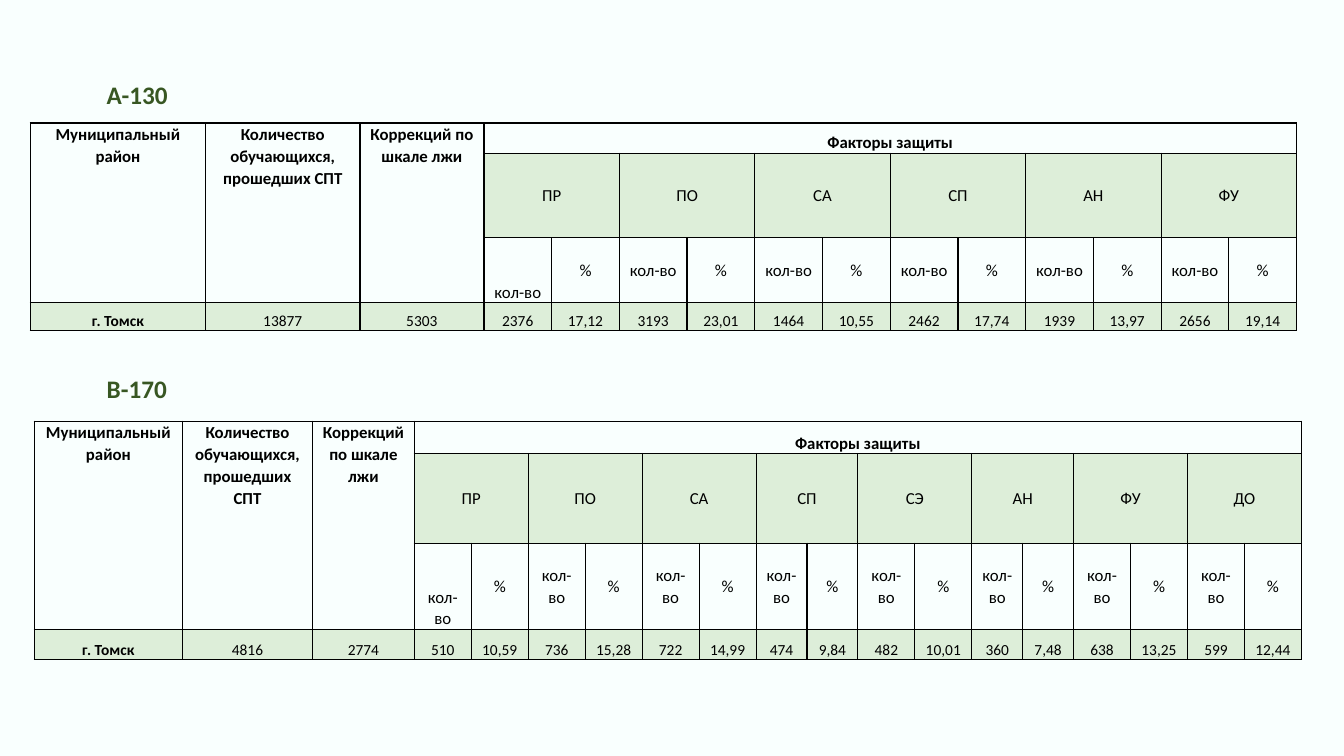
from pptx import Presentation
from pptx.dml.color import RGBColor
from pptx.enum.text import MSO_ANCHOR as Anchor, PP_ALIGN as Align
from pptx.oxml import parse_xml
from pptx.oxml.ns import nsdecls
from pptx.util import Inches, Pt

LINE = ('<a:{} {} w="12700"><a:solidFill><a:srgbClr val="000000"/></a:solidFill>'
        '</a:{}>')
ALPHA = '<a:alpha {} val="20000"/>'
INK = {"name": "Calibri", "color": "000000"}


def rgb(tint):
    return RGBColor.from_string(tint)


def write(frame, text, fmt, **para):
    """Put one run of text in a frame, with font and paragraph formats."""
    line = frame.paragraphs[0]
    line.line_spacing = 1.07
    for key, val in para.items():
        setattr(line, key, val)
    run = line.add_run()
    run.text = text
    for key, val in fmt.items():
        if key == "color":
            run.font.color.rgb = rgb(val)
        else:
            setattr(run.font, key, val)


# Slide
deck = Presentation()
deck.slide_width, deck.slide_height = Inches(13.33), Inches(7.5)
slide = deck.slides.add_slide(deck.slide_layouts[6])
slide.background.fill.solid()
slide.background.fill.fore_color.rgb = rgb("F9FFFE")

# Both tests: label, its top, table place, widths, heights and values
tests = [
    {"label": "А-130", "top": 0.72, "at": (0.3, 1.22),
     "lead": [1.74, 1.53, 1.23], "rows": [0.3, 0.84, 0.6, 0.28],
     "codes": "ПР ПО СА СП АН ФУ".split(), "pairs": [8.06 / 6] * 6,
     "data": "13877 5303 2376 17,12 3193 23,01 1464 10,55 2462 17,74 "
             "1939 13,97 2656 19,14"},
    {"label": "В-170", "top": 3.63, "at": (0.34, 4.18),
     "lead": [1.47, 1.29, 1.01], "rows": [0.32, 0.89, 0.63, 0.3],
     "codes": "ПР ПО СА СП СЭ АН ФУ ДО".split(),
     "pairs": [1.13] * 3 + [1.01, 1.13, 1.01] + [1.13] * 2,
     "data": "4816 2774 510 10,59 736 15,28 722 14,99 474 9,84 482 10,01 "
             "360 7,48 638 13,25 599 12,44"},
]
heads = ["Муниципальный район", "Количество обучающихся, прошедших СПТ",
         "Коррекций по шкале лжи"]

for test in tests:
    # Label
    box = slide.shapes.add_textbox(Inches(0.96), Inches(test["top"]),
                                   Inches(0.81), Inches(0.43))
    box.text_frame.word_wrap = False
    write(box.text_frame, test["label"],
          INK | {"size": Pt(18), "bold": True, "color": "385723"},
          space_after=Pt(8))

    # Empty grid
    codes, rows = test["codes"], test["rows"]
    cols = test["lead"] + [pair / 2 for pair in test["pairs"] for _ in "ab"]
    left, top = test["at"]
    shape = slide.shapes.add_table(len(rows), len(cols), Inches(left), Inches(top),
                                   Inches(sum(cols)), Inches(sum(rows)))
    grid = shape.table
    grid.first_row = grid.horz_banding = False
    for col, width in zip(grid.columns, cols):
        col.width = Inches(width)
    for row, height in zip(grid.rows, rows):
        row.height = Inches(height)

    # Wording by row and column
    words = {(0, c): head for c, head in enumerate(heads)}
    words[0, 3] = "Факторы защиты"
    for n, code in enumerate(codes):
        c = 3 + 2 * n
        words |= {(1, c): code, (2, c): "кол-во", (2, c + 1): "%"}
    for c, val in enumerate(["г. Томск"] + test["data"].split()):
        words[3, c] = val

    # Cells
    for r in range(len(rows)):
        for c in range(len(cols)):
            cell = grid.cell(r, c)
            cell.margin_left = cell.margin_right = Inches(0.07)
            cell.margin_top = cell.margin_bottom = 0
            if r == 3 or (r == 0 and c == 3) or (r == 2 and c == 3):
                cell.vertical_anchor = Anchor.BOTTOM
            elif r > 0:
                cell.vertical_anchor = Anchor.MIDDLE
            if r == 3 or (r == 1 and c > 2):
                cell.fill.solid()
                cell.fill.fore_color.rgb = rgb("70AD47")
                tint = cell._tc.tcPr.find(".//{*}srgbClr")
                tint.append(parse_xml(ALPHA.format(nsdecls("a"))))
            else:
                cell.fill.background()
            for n, side in enumerate(["lnL", "lnR", "lnT", "lnB"]):
                edge = parse_xml(LINE.format(side, nsdecls("a"), side))
                cell._tc.tcPr.insert(n, edge)
            if (r, c) in words:
                fmt = {"size": Pt(11 if r == 3 else 12),
                       "bold": r == 0 or (r == 3 and c == 0)}
                write(cell.text_frame, words[r, c], INK | fmt,
                      alignment=Align.CENTER)

    # Merged heads
    for c in range(3):
        grid.cell(0, c).merge(grid.cell(2, c))
    grid.cell(0, 3).merge(grid.cell(0, len(cols) - 1))
    for c in range(3, len(cols), 2):
        grid.cell(1, c).merge(grid.cell(1, c + 1))

deck.save("out.pptx")
